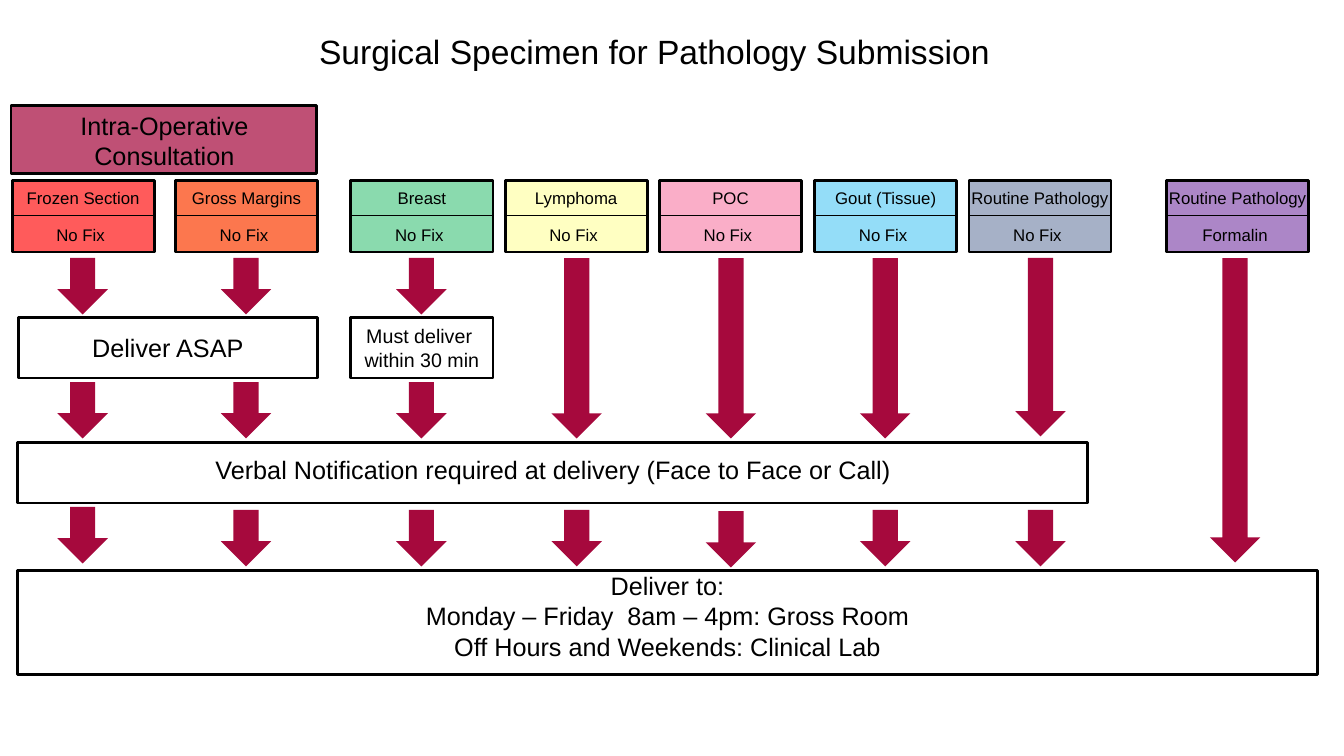
from pptx import Presentation
from pptx.dml.color import RGBColor as RGB
from pptx.enum.shapes import MSO_CONNECTOR as CONN, MSO_SHAPE as SHAPE
from pptx.enum.text import MSO_ANCHOR as ANCHOR, MSO_AUTO_SIZE as AUTO, PP_ALIGN as ALIGN
from pptx.oxml.ns import qn
from pptx.util import Inches, Pt
from lxml import etree

COLORS = {
    "ink": "000000", "crimson": "A6093D", "red": "FF5B5B", "orange": "FC774E",
    "green": "00B050", "yellow": "FFFF79", "pink": "F5407C", "sky": "00B0F0",
    "navy": "002060", "purple": "7030A0",
}
CARD_W, CARD_H, CARD_TOP = 1.41, 0.71, 1.79
ARROW_W, ARROW_H = 0.5, 0.56
ARROW_TOP = 2.56


def write(sp, text, size=18, color="ink", font="Arial", anchor=ANCHOR.TOP):
    """Fill a shape with centred text, one paragraph per line."""
    tf = sp.text_frame
    tf.word_wrap = True
    tf.auto_size = AUTO.NONE
    tf.vertical_anchor = anchor
    tf.margin_left = tf.margin_right = tf.margin_top = tf.margin_bottom = 0
    for i, line in enumerate(text.split("\n")):
        p = tf.add_paragraph() if i else tf.paragraphs[0]
        p.alignment = ALIGN.CENTER
        r = p.add_run()
        r.text = line
        r.font.size, r.font.name = Pt(size), font
        r.font.color.rgb = RGB.from_string(COLORS[color])


class FlowSlide:
    def __init__(self, prs):
        self.s = prs.slides.add_slide(prs.slide_layouts[5])
        self.shapes = self.s.shapes

    def title(self, text, x, y, w, h):
        sp = self.shapes.title
        sp.left, sp.top, sp.width, sp.height = map(Inches, (x, y, w, h))
        write(sp, text, size=24)

    def start_group(self):
        """Send the next elements to a new group."""
        self.shapes = self.s.shapes.add_group_shape().shapes

    def end_group(self):
        self.shapes = self.s.shapes

    def shape(self, kind, x, y, w, h, fill=None, alpha=100, line=None):
        sp = self.shapes.add_shape(kind, *map(Inches, (x, y, w, h)))
        sp.shadow.inherit = False
        if fill:
            sp.fill.solid()
            sp.fill.fore_color.rgb = RGB.from_string(COLORS[fill])
            if alpha < 100:
                clr = sp.fill._xPr.find(qn("a:solidFill"))[0]
                etree.SubElement(clr, qn("a:alpha")).set("val", str(alpha * 1000))
        else:
            sp.fill.background()
        if line:
            sp.line.color.rgb = RGB.from_string(COLORS["ink"])
            sp.line.width = Pt(line)
        else:
            sp.line.fill.background()
        return sp

    def box(self, x, y, w, h, text=None, size=18, anchor=ANCHOR.MIDDLE, **look):
        sp = self.shape(SHAPE.RECTANGLE, x, y, w, h, line=2, **look)
        if text:
            write(sp, text, size=size, anchor=anchor)

    def label(self, text, x, y, w, h, size=18):
        write(self.shapes.add_textbox(*map(Inches, (x, y, w, h))), text, size=size)

    def divider(self, x, y, w):
        c = self.shapes.add_connector(CONN.STRAIGHT, *map(Inches, (x, y, x + w, y)))
        c.line.color.rgb = RGB.from_string(COLORS["ink"])
        c.line.width = Pt(0.75)
        etree.SubElement(c._element.spPr, qn("a:effectLst"))

    def card(self, x, name, fixative, fill, alpha):
        self.start_group()
        self.box(x, CARD_TOP, CARD_W, CARD_H, fill=fill, alpha=alpha)
        self.divider(x, CARD_TOP + 0.35, CARD_W)
        # Labels stay on the slide: the first card sits near its left edge
        self.label(name, x - 0.1, 1.86, 1.61, 0.3, size=12)
        self.label(fixative, x - 0.1, 2.23, 1.56, 0.37, size=12)
        self.end_group()

    def arrow(self, x, y, h):
        self.shape(SHAPE.DOWN_ARROW, x, y, ARROW_W, h, fill="crimson")


# Arrow runs below a card: (top, height)
STEPPED = [(ARROW_TOP, ARROW_H), (3.79, ARROW_H)]
LONG = [(ARROW_TOP, 1.79)]
LAST = [(5.06, ARROW_H)]

# Card left, arrow left, specimen, fixative, fill, opacity, arrows
SPECIMENS = [
    (0.12, 0.57, "Frozen Section", "No Fix", "red", 100, STEPPED + [(5.03, ARROW_H)]),
    (1.74, 2.19, "Gross Margins", "No Fix", "orange", 100, STEPPED + LAST),
    (3.48, 3.93, "Breast", "No Fix", "green", 46, STEPPED + LAST),
    (5.01, 5.47, "Lymphoma", "No Fix", "yellow", 45, LONG + LAST),
    (6.54, 7.0, "POC", "No Fix", "pink", 42, LONG + [(5.07, ARROW_H)]),
    (8.08, 8.53, "Gout (Tissue)", "No Fix", "sky", 42, LONG + LAST),
    (9.61, 10.07, "Routine Pathology", "No Fix", "navy", 35, [(ARROW_TOP, 1.77)] + LAST),
    (11.57, 12.0, "Routine Pathology", "Formalin", "purple", 58, [(ARROW_TOP, 3.02)]),
]


def main():
    prs = Presentation()
    prs.slide_width, prs.slide_height = Inches(13.33), Inches(7.5)
    flow = FlowSlide(prs)
    flow.title("Surgical Specimen for Pathology Submission", 0.15, 0.31, 12.68, 0.67)

    # Heading over the first two specimens
    flow.start_group()
    flow.box(0.11, 1.05, 3.03, 0.67, fill="crimson", alpha=71)
    flow.label("Intra-Operative Consultation", 0.34, 1.09, 2.58, 0.47)
    flow.end_group()

    # Specimen cards and their arrows
    for x, arrow_x, name, fixative, fill, alpha, arrows in SPECIMENS:
        flow.card(x, name, fixative, fill, alpha)
        for top, height in arrows:
            flow.arrow(arrow_x, top, height)

    # Delivery steps
    flow.box(0.18, 3.15, 2.97, 0.6, "Deliver ASAP")
    flow.box(3.48, 3.15, CARD_W, 0.6, "Must deliver \nwithin 30 min", size=14)
    flow.box(0.17, 4.39, 10.62, 0.6)
    flow.label("Verbal Notification required at delivery (Face to Face or Call)",
               0.29, 4.51, 10.39, 0.22)
    flow.box(0.17, 5.66, 12.9, 1.03,
             "Deliver to:\nMonday – Friday  8am – 4pm: Gross Room\n"
             "Off Hours and Weekends: Clinical Lab", anchor=ANCHOR.TOP)

    prs.save("out.pptx")


if __name__ == "__main__":
    main()
